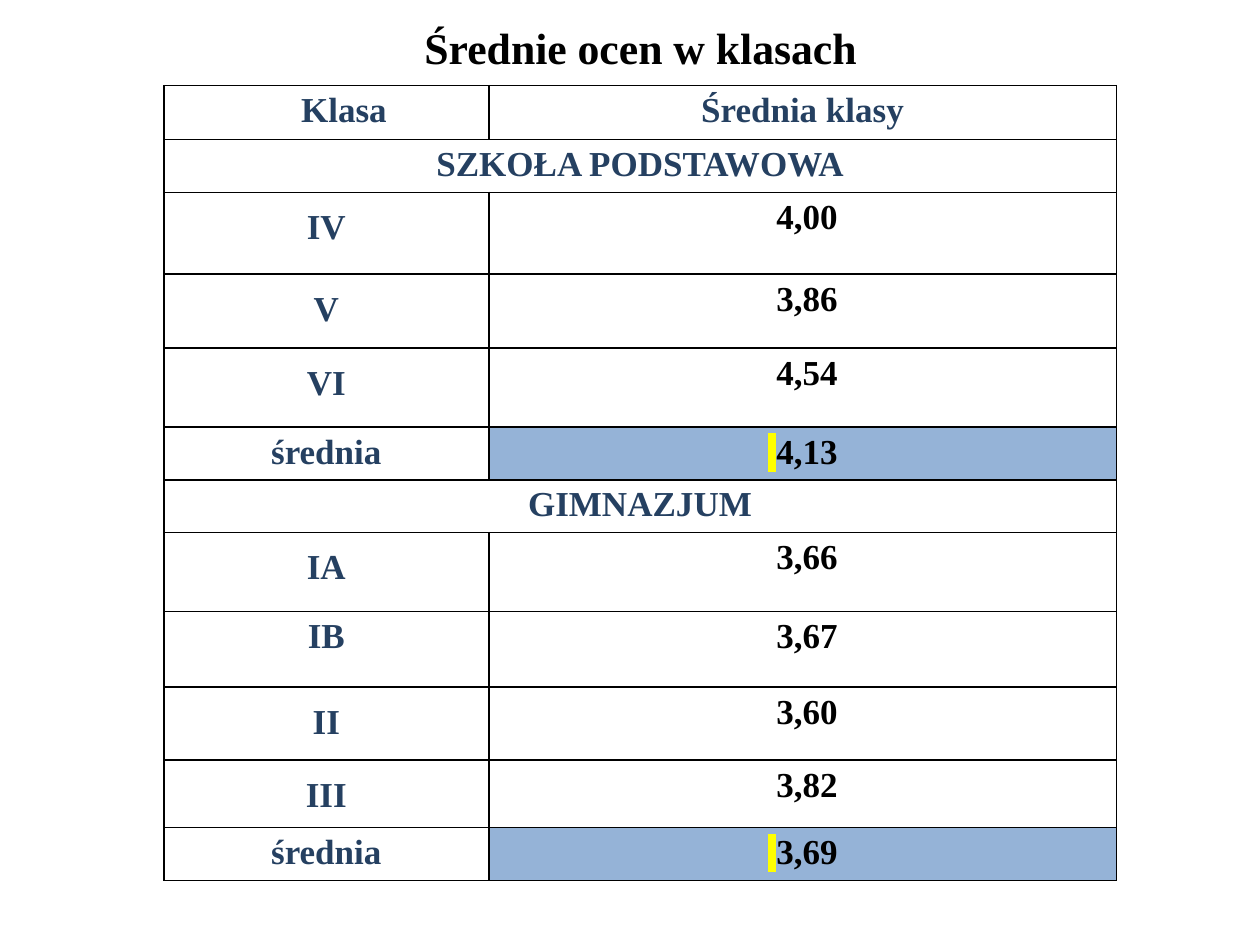
from lxml import etree
from pptx import Presentation
from pptx.dml.color import RGBColor
from pptx.enum.text import MSO_ANCHOR, PP_ALIGN
from pptx.oxml.ns import qn
from pptx.util import Inches, Pt

CENTER = PP_ALIGN.CENTER
MIDDLE = MSO_ANCHOR.MIDDLE
FONT = "Times New Roman"
COLORS = {"black": "000000", "navy": "254061", "blue": "95B3D7", "mark": "FFFF00"}
COLS = [2.58, 4.98]
ROWS = [
    ("Klasa", "Średnia klasy", 0.43),
    ("SZKOŁA PODSTAWOWA", None, 0.42),
    ("IV", "4,00", 0.65),
    ("V", "3,86", 0.59),
    ("VI", "4,54", 0.63),
    ("średnia", "4,13", 0.42),
    ("GIMNAZJUM", None, 0.42),
    ("IA", "3,66", 0.63),
    ("IB", "3,67", 0.6),
    ("II", "3,60", 0.58),
    ("III", "3,82", 0.54),
    ("średnia", "3,69", 0.42),
]
LOW = ("IV", "V", "VI", "IA", "II", "III")


def style(run, size, color):
    """Set the font of a run."""
    run.font.name = FONT
    run.font.size = Pt(size)
    run.font.bold = True
    run.font.color.rgb = RGBColor.from_string(COLORS[color])


def mark(run):
    """Highlight a run in yellow."""
    light = etree.Element(qn("a:highlight"))
    etree.SubElement(light, qn("a:srgbClr"), val=COLORS["mark"])
    run.font._element.find(qn("a:solidFill")).addnext(light)


def border(cell):
    """Draw a thin black line on all four sides of a cell."""
    props = cell._tc.get_or_add_tcPr()
    for spot, side in enumerate(("lnL", "lnR", "lnT", "lnB")):
        line = etree.Element(qn(f"a:{side}"), w=str(Pt(1)))
        fill = etree.SubElement(line, qn("a:solidFill"))
        etree.SubElement(fill, qn("a:srgbClr"), val=COLORS["black"])
        props.insert(spot, line)


def write(cell, parts, color):
    """Fill a cell with centred runs and return them."""
    para = cell.text_frame.paragraphs[0]
    para.alignment = CENTER
    para.line_spacing = 1.15
    runs = []
    for part in parts:
        run = para.add_run()
        run.text = part
        style(run, 20, color)
        runs.append(run)
    return runs


def add_title(slide, left, top, width, height):
    """Place the heading in its box."""
    frame = slide.shapes.add_textbox(left, top, width, height).text_frame
    frame.word_wrap = True
    frame.vertical_anchor = MIDDLE
    frame.text = "Średnie ocen w klasach"
    para = frame.paragraphs[0]
    para.alignment = CENTER
    style(para.runs[0], 25, "black")


def add_grades(slide, left, top, width, height):
    """Place the table of class averages in its box."""
    table = slide.shapes.add_table(
        len(ROWS), len(COLS), left, top, width, height).table
    table.first_row = table.horz_banding = False
    for col, size in zip(table.columns, COLS):
        col.width = int(width * size / sum(COLS))
    total = sum(row[2] for row in ROWS)
    for row, (name, grade, size) in zip(table.rows, ROWS):
        row.height = int(height * size / total)
        for cell in row.cells:
            cell.margin_left = cell.margin_right = Inches(0.05)
            cell.margin_top = cell.margin_bottom = 0
            cell.fill.background()
            border(cell)
        first, last = row.cells
        write(first, [name], "navy")
        if name in LOW:
            first.margin_top = Inches(0.08)
        if grade is None:
            first.merge(last)
        elif name == "Klasa":
            first.margin_left = Inches(0.33)
            write(last, [grade], "navy")
        else:
            runs = write(last, [" ", grade], "black")
            if name == "średnia":
                mark(runs[0])
                last.fill.solid()
                last.fill.fore_color.rgb = RGBColor.from_string(COLORS["blue"])


def main():
    """Build and save the slide."""
    deck = Presentation()
    deck.slide_width, deck.slide_height = Inches(10), Inches(7.5)
    slide = deck.slides.add_slide(deck.slide_layouts[6])
    add_title(slide, Inches(2.8), Inches(0.09), Inches(4.57), Inches(0.56))
    add_grades(slide, Inches(1.3), Inches(0.68), Inches(7.56), Inches(6.31))
    deck.save("out.pptx")


if __name__ == "__main__":
    main()
